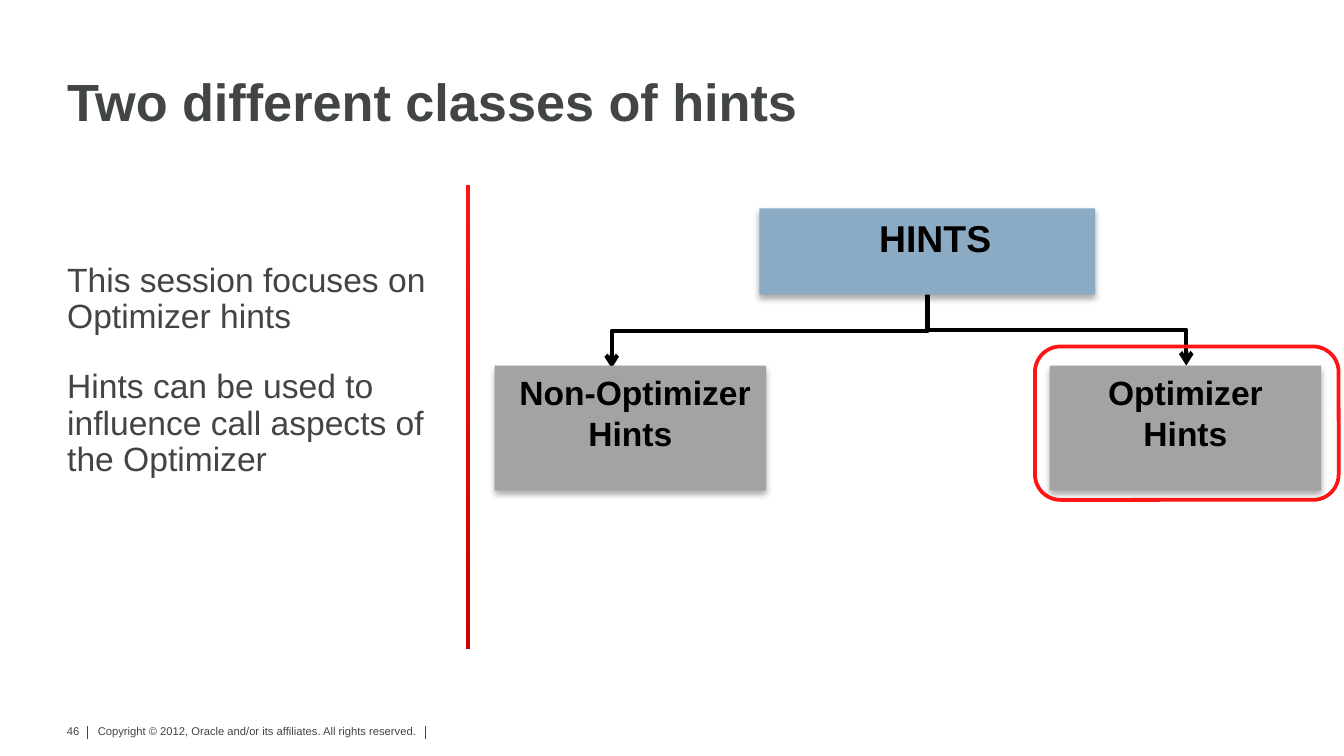
from pptx import Presentation
from pptx.dml.color import RGBColor
from pptx.enum.shapes import MSO_CONNECTOR, MSO_SHAPE
from pptx.enum.text import MSO_ANCHOR, PP_ALIGN
from pptx.oxml import parse_xml
from pptx.oxml.ns import nsdecls
from pptx.util import Cm, Pt

SHADOW = (
    f'<a:outerShdw {nsdecls("a")} blurRad="44450" dist="27940" dir="5400000" '
    'rotWithShape="0"><a:srgbClr val="000000"><a:alpha val="32000"/>'
    '</a:srgbClr></a:outerShdw>'
)


def color(value):
    return RGBColor.from_string(value)


def write(paragraph, text, size, ink, font, bold=False, align=PP_ALIGN.LEFT,
          line_spacing=None, space_after=None, indent=0):
    """Fill one paragraph; indent shifts its first line, in cm."""
    properties = paragraph._p.get_or_add_pPr()
    properties.set("marL", "0")
    properties.set("indent", str(Cm(indent)))
    paragraph.alignment = align
    if line_spacing:
        paragraph.line_spacing = line_spacing
    paragraph.space_before = Pt(0)
    if space_after:
        paragraph.space_after = Pt(space_after)
    properties.append(parse_xml(f'<a:buNone {nsdecls("a")}/>'))
    run = paragraph.add_run()
    run.text = text
    run.font.name = font
    run.font.size = Pt(size)
    run.font.bold = bold
    run.font.color.rgb = color(ink)


class SlideBuilder:
    font = "Arial"
    gray = "424545"
    black = "000000"
    red = "FF1414"
    dark_red = "CE0000"

    def __init__(self, slide):
        self.slide = slide

    def set_margins(self, frame, left, top, right, bottom):
        frame.margin_left, frame.margin_top = Cm(left), Cm(top)
        frame.margin_right, frame.margin_bottom = Cm(right), Cm(bottom)

    def placeholder(self, shape, place, texts, anchor, bottom_margin=0, **style):
        shape.left, shape.top, shape.width, shape.height = map(Cm, place)
        frame = shape.text_frame
        frame.word_wrap = True
        frame.vertical_anchor = anchor
        self.set_margins(frame, 0, 0, 0, bottom_margin)
        for index, text in enumerate(texts):
            paragraph = frame.add_paragraph() if index else frame.paragraphs[0]
            write(paragraph, text, ink=self.gray, font=self.font,
                  line_spacing=0.9, **style)

    def footer_text(self, text, place, margins, wrap=True, **style):
        frame = self.slide.shapes.add_textbox(*map(Cm, place)).text_frame
        frame.word_wrap = wrap
        self.set_margins(frame, *margins)
        write(frame.paragraphs[0], text, size=6, ink=self.gray,
              font=self.font, **style)

    def shape(self, kind, place):
        shape = self.slide.shapes.add_shape(kind, *map(Cm, place))
        shape.shadow.inherit = False
        return shape

    def divider(self, place):
        shape = self.shape(MSO_SHAPE.RECTANGLE, place)
        shape.line.fill.background()
        shape.fill.gradient()
        shape.fill.gradient_angle = 270
        stops = zip(shape.fill.gradient_stops, (self.red, self.dark_red))
        for position, (stop, value) in enumerate(stops):
            stop.position = position
            stop.color.rgb = color(value)

    def box(self, text, place, fill, size=18, indent=0):
        shape = self.shape(MSO_SHAPE.RECTANGLE, place)
        shape.fill.solid()
        shape.fill.fore_color.rgb = color(fill)
        shape.line.fill.background()
        shape._element.spPr.find("{*}effectLst").append(parse_xml(SHADOW))
        frame = shape.text_frame
        frame.word_wrap = True
        frame.vertical_anchor = MSO_ANCHOR.TOP
        write(frame.paragraphs[0], text, size=size, ink=self.black,
              font=self.font, bold=True, align=PP_ALIGN.CENTER, indent=indent)

    def highlight(self, place):
        shape = self.shape(MSO_SHAPE.ROUNDED_RECTANGLE, place)
        shape.fill.background()
        shape.line.color.rgb = color(self.red)
        shape.line.width = Pt(2)

    def connector(self, kind, ends, ink, width):
        connector = self.slide.shapes.add_connector(kind, *map(Cm, ends))
        connector.line.color.rgb = color(ink)
        connector.line.width = Pt(width)
        connector._element.spPr.append(parse_xml(f'<a:effectLst {nsdecls("a")}/>'))
        return connector

    def down_arrow(self, start_x, start_y, end_x, end_y):
        """Elbow arrow that leaves and arrives vertically: a turned elbow."""
        across, down = end_x - start_x, end_y - start_y
        middle_x, middle_y = (start_x + end_x) / 2, (start_y + end_y) / 2
        side = 1 if across > 0 else -1
        ends = (middle_x + side * down / 2, middle_y - abs(across) / 2,
                middle_x - side * down / 2, middle_y + abs(across) / 2)
        connector = self.connector(MSO_CONNECTOR.ELBOW, ends, self.black, 2.25)
        rotation = 270 if side > 0 else 90
        connector._element.spPr.find("{*}xfrm").set("rot", str(rotation * 60000))
        connector.line._get_or_add_ln().append(
            parse_xml(f'<a:tailEnd {nsdecls("a")} type="arrow"/>'))


def main():
    presentation = Presentation()
    presentation.slide_width, presentation.slide_height = Cm(25.4), Cm(14.29)
    slide = presentation.slides.add_slide(presentation.slide_layouts[1])
    builder = SlideBuilder(slide)

    # Title and statements
    builder.placeholder(slide.shapes.title, (1.27, 1.35, 22.86, 1.17),
                        ["Two different classes of hints"],
                        MSO_ANCHOR.BOTTOM, size=28, bold=True)
    builder.placeholder(slide.placeholders[1], (1.27, 4.22, 7.24, 6.91),
                        ["This session focuses on Optimizer hints",
                         "Hints can be used to influence call aspects of the Optimizer"],
                        MSO_ANCHOR.MIDDLE, bottom_margin=1.32,
                        size=18, space_after=18)

    # Footer
    builder.footer_text("46", (0.99, 13.56, 0.76, 0.51),
                        (0.25, 0.13, 0.25, 0.13), wrap=False, align=PP_ALIGN.RIGHT)
    builder.footer_text(
        "Copyright © 2012, Oracle and/or its affiliates. All rights reserved.",
        (1.75, 13.64, 6.96, 0.61), (0.1, 0.05, 0.1, 0.05))
    for x in (1.65, 8.04):
        builder.connector(MSO_CONNECTOR.STRAIGHT, (x, 13.72, x, 13.97),
                          builder.gray, 0.5)

    # Divider
    builder.divider((8.81, 3.5, 0.08, 8.76))

    # Hint tree
    builder.box("Optimizer Hints", (19.84, 6.91, 5.13, 2.36), "A3A3A3")
    builder.down_arrow(17.53, 5.56, 22.42, 6.91)
    builder.down_arrow(17.53, 5.54, 11.56, 6.96)
    builder.box("Non-Optimizer Hints", (9.35, 6.91, 5.13, 2.36), "A3A3A3",
                indent=0.18)
    builder.highlight((19.56, 6.55, 5.74, 2.9))
    builder.box("HINTS", (14.35, 3.94, 6.35, 1.63), "8BAAC3", size=20, indent=0.3)

    presentation.save("out.pptx")


if __name__ == "__main__":
    main()
